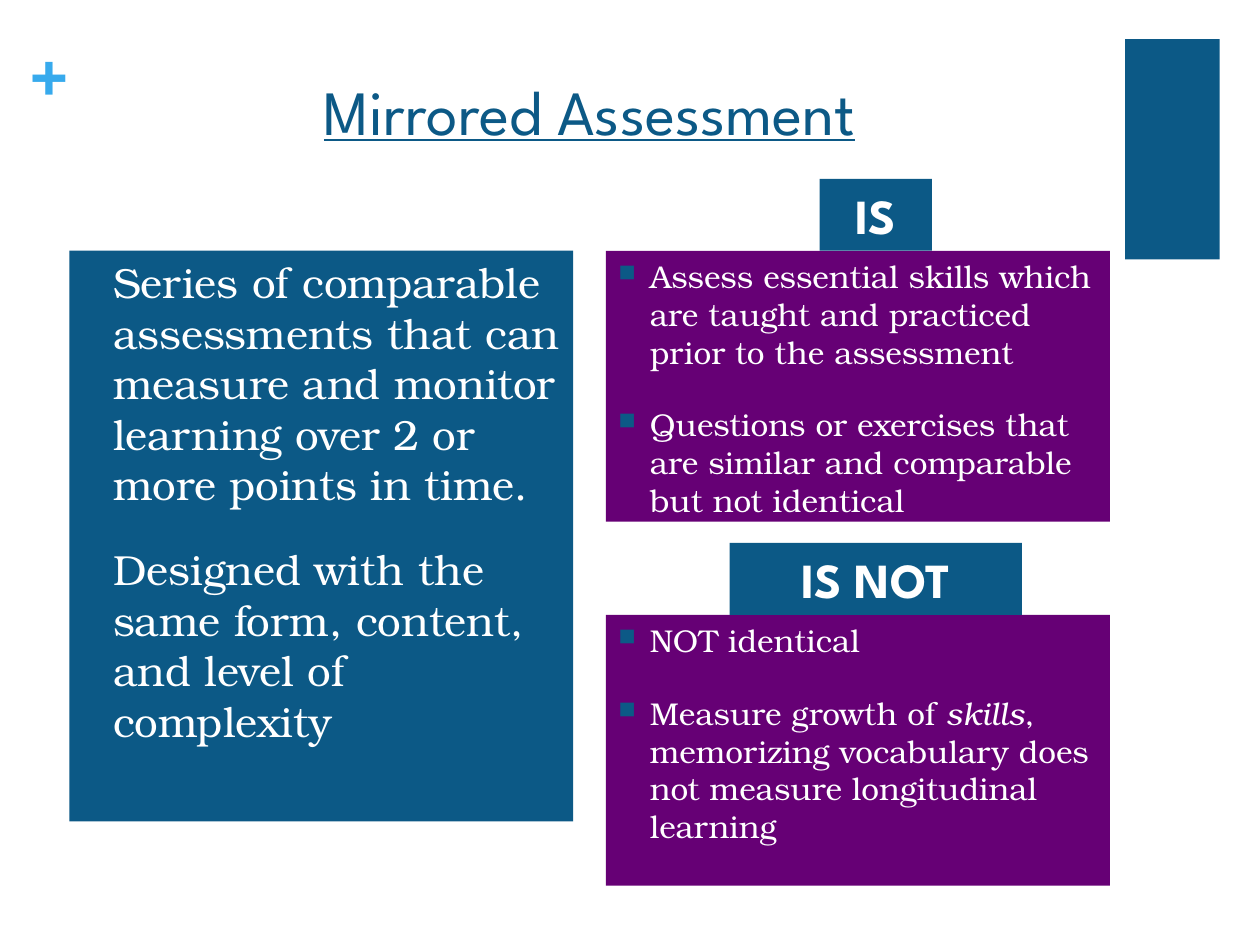
from lxml import etree
from pptx import Presentation
from pptx.dml.color import RGBColor
from pptx.enum.shapes import MSO_SHAPE as SHAPE
from pptx.enum.text import MSO_ANCHOR as ANCHOR, PP_ALIGN as ALIGN
from pptx.oxml.ns import qn
from pptx.util import Inches, Pt

BLUE, PURPLE, SKY, WHITE = "0C5986", "660075", "37AAED", "FFFFFF"
HEAD_FONT, BODY_FONT = "League Spartan", "TeX Gyre Bonum"

LEFT, COLUMN, GUTTER = 0.55, 4, 0.26
RIGHT = LEFT + COLUMN + GUTTER
PANEL_TOP, PANEL_HEIGHT, PITCH = 1.99, 2.15, 2.89
BADGE_HEIGHT, BADGE_CENTRE = 0.57, 6.95


def rgb(hex_colour):
    return RGBColor.from_string(hex_colour)


def add_block(slide, box, fill):
    block = slide.shapes.add_shape(SHAPE.RECTANGLE, *map(Inches, box))
    block.shadow.inherit = False
    block.fill.solid()
    block.fill.fore_color.rgb = rgb(fill)
    block.line.fill.background()
    block.text_frame.vertical_anchor = ANCHOR.TOP
    block.text_frame.word_wrap = True
    return block


def add_run(paragraph, words, size, font, colour, **style):
    run = paragraph.add_run()
    run.text = words
    run.font.size = Pt(size)
    run.font.name = font
    run.font.color.rgb = rgb(colour)
    for key, value in style.items():
        setattr(run.font, key, value)


def add_bullet(paragraph):
    props = paragraph._p.get_or_add_pPr()
    props.set("marL", str(Inches(0.25)))
    props.set("indent", str(-Inches(0.25)))
    colour = etree.SubElement(props, qn("a:buClr"))
    etree.SubElement(colour, qn("a:srgbClr"), val=BLUE)
    etree.SubElement(props, qn("a:buSzPct"), val="75000")
    etree.SubElement(props, qn("a:buChar"), char="■")


def add_panel(slide, box, fill, size, points):
    """Each point is a list of (words, italic) pairs."""
    frame = add_block(slide, box, fill).text_frame
    for index, point in enumerate(points):
        paragraph = frame.add_paragraph() if index else frame.paragraphs[0]
        paragraph.alignment = ALIGN.LEFT
        paragraph.space_before = Pt(20 if index else 0)
        add_bullet(paragraph)
        for words, italic in point:
            add_run(paragraph, words, size, BODY_FONT, WHITE, italic=italic)


def add_badged_panel(slide, box, label, badge_width, points):
    left, top, width, height = box
    add_panel(slide, box, PURPLE, 18, points)
    badge = add_block(slide, (BADGE_CENTRE - badge_width / 2, top - BADGE_HEIGHT,
                              badge_width, BADGE_HEIGHT), BLUE)
    paragraph = badge.text_frame.paragraphs[0]
    paragraph.alignment = ALIGN.CENTER
    add_run(paragraph, label, 28, HEAD_FONT, WHITE, bold=True)


def add_decoration(slide):
    add_block(slide, (8.93, 0.31, 0.75, 1.75), BLUE)
    frame = slide.shapes.add_textbox(*map(Inches, (0.24, 0.25, 0.29, 0.61))).text_frame
    frame.margin_left = frame.margin_right = frame.margin_top = frame.margin_bottom = 0
    add_run(frame.paragraphs[0], "+", 36, BODY_FONT, SKY, bold=True)


def add_title(slide, box, words):
    frame = slide.shapes.add_textbox(*map(Inches, box)).text_frame
    frame.word_wrap = True
    frame.paragraphs[0].alignment = ALIGN.CENTER
    add_run(frame.paragraphs[0], words, 36, HEAD_FONT, BLUE, underline=True)


def main():
    deck = Presentation()
    deck.slide_width, deck.slide_height = Inches(10), Inches(7.5)
    slide = deck.slides.add_slide(deck.slide_layouts[6])

    add_decoration(slide)
    add_title(slide, (LEFT, 0.53, 2 * COLUMN + GUTTER, 1.22), "Mirrored Assessment")
    add_panel(slide, (LEFT, PANEL_TOP, COLUMN, 4.53), BLUE, 24, [
        [("Series of comparable assessments that can measure and monitor "
          "learning over 2 or more points in time.", False)],
        [("Designed with the same form, content, and level of complexity", False)],
    ])
    sides = [
        ("IS", 0.89, [
            [("Assess essential skills which are taught and practiced prior "
              "to the assessment", False)],
            [("Questions or exercises that are similar and comparable but "
              "not identical", False)],
        ]),
        ("IS NOT", 2.32, [
            [("NOT identical", False)],
            [("Measure growth of ", False), ("skills", True),
             (", memorizing vocabulary does not measure longitudinal learning", False)],
        ]),
    ]
    for row, (label, badge_width, points) in enumerate(sides):
        box = (RIGHT, PANEL_TOP + row * PITCH, COLUMN, PANEL_HEIGHT)
        add_badged_panel(slide, box, label, badge_width, points)

    deck.save("out.pptx")


if __name__ == "__main__":
    main()
